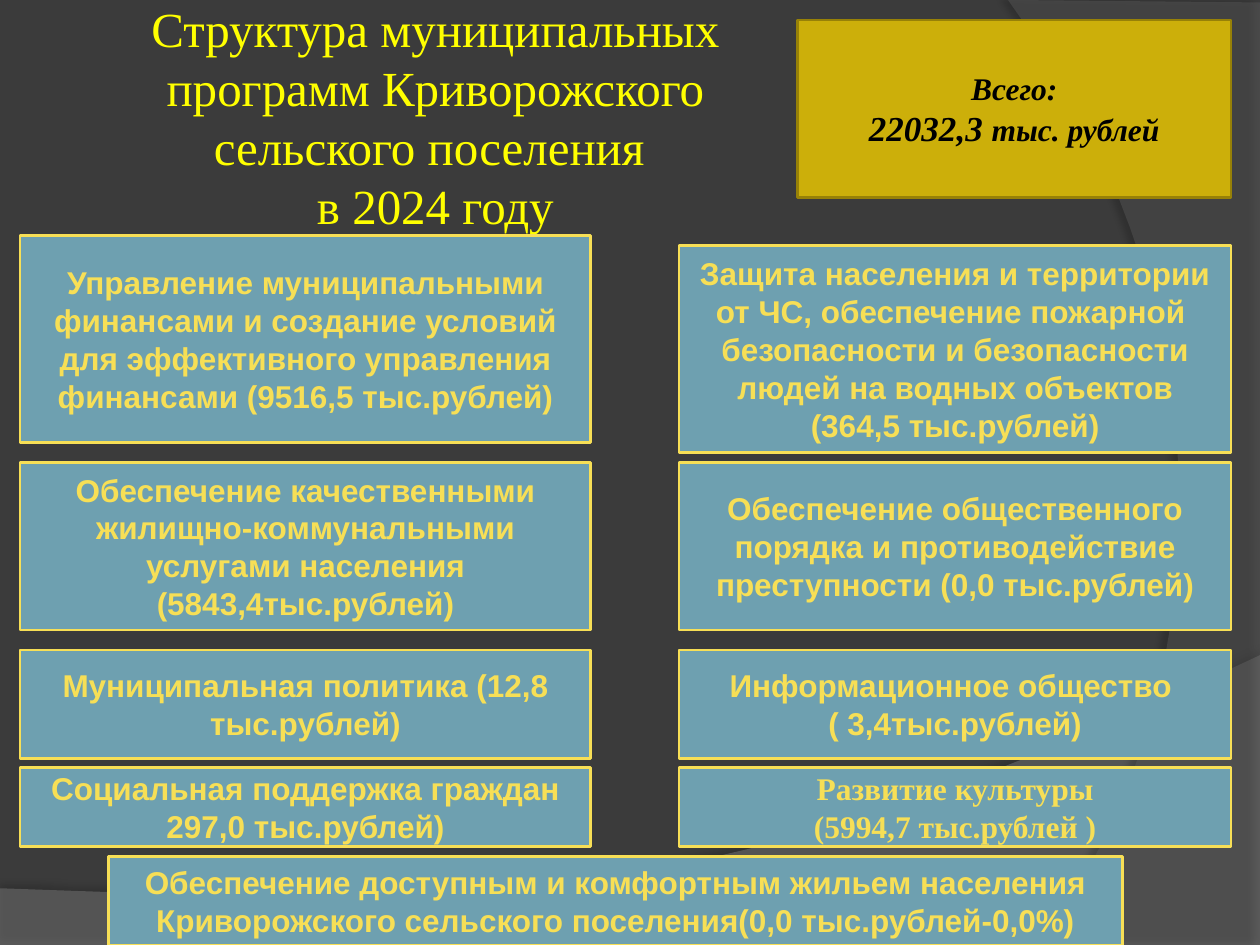
from lxml.etree import SubElement
from pptx import Presentation
from pptx.dml.color import RGBColor
from pptx.enum.shapes import MSO_SHAPE
from pptx.enum.text import MSO_ANCHOR, MSO_AUTO_SIZE, PP_ALIGN
from pptx.oxml.ns import qn
from pptx.util import Inches, Pt

BACK = RGBColor(0x3B, 0x3B, 0x3B)
WAVE = RGBColor(0x7F, 0x7F, 0x7F)
ARC = RGBColor(0x5E, 0x5E, 0x5E)
YELLOW = RGBColor(0xFF, 0xFF, 0x00)
BLACK = RGBColor(0x00, 0x00, 0x00)
GOLD = RGBColor(0xCC, 0xAF, 0x0A)
GOLD_EDGE = RGBColor(0x97, 0x81, 0x07)
TEAL = RGBColor(0x6E, 0xA0, 0xB0)
SAND = RGBColor(0xF7, 0xDF, 0x56)
SANS, SERIF = "Arial", "Times New Roman"

LEFT_X, LEFT_W = 0.16, 4.53
RIGHT_X, RIGHT_W = 5.39, 4.38
ROWS = [(1.87, 1.64), (3.67, 1.33), (5.16, 0.86), (6.09, 0.63)]
LEFT = [
    "Управление муниципальными финансами и создание условий для эффективного "
    "управления финансами (9516,5 тыс.рублей)",
    "Обеспечение качественными жилищно-коммунальными услугами населения "
    "(5843,4тыс.рублей)",
    "Муниципальная политика (12,8 тыс.рублей)",
    "Социальная поддержка граждан 297,0 тыс.рублей)",
]
RIGHT = [
    "Защита населения и территории от ЧС, обеспечение пожарной  безопасности "
    "и безопасности людей на водных объектов (364,5 тыс.рублей)",
    "Обеспечение общественного порядка и противодействие преступности "
    "(0,0 тыс.рублей)",
    "Информационное общество \n( 3,4тыс.рублей)",
    "Развитие культуры\n(5994,7 тыс.рублей )",
]
HOUSING = ("Обеспечение доступным и комфортным жильем населения Криворожского "
           "сельского поселения(0,0 тыс.рублей-0,0%)")


def curve(p0, p1, p2, p3, steps=40):
    """Return points along a cubic Bezier curve, without its start."""
    ts = [i / steps for i in range(1, steps + 1)]
    return [tuple((1 - t) ** 3 * a + 3 * (1 - t) ** 2 * t * b
                  + 3 * (1 - t) * t ** 2 * c + t ** 3 * d
                  for a, b, c, d in zip(p0, p1, p2, p3)) for t in ts]


def add_backdrop(slide, points, color, alpha, shadow):
    """Draw a translucent backdrop outline with a soft shadow."""
    start, *rest = [(Inches(x), Inches(y)) for x, y in points]
    fb = slide.shapes.build_freeform(*start)
    fb.add_line_segments(rest, close=True)
    sp = fb.convert_to_shape()
    sp.fill.solid()
    sp.fill.fore_color.rgb = color
    sp.line.fill.background()
    sp.shadow.inherit = False
    props = sp._element.spPr
    clr = props.find(qn("a:solidFill"))[0]
    SubElement(clr, qn("a:alpha"), val=str(alpha * 1000))
    opacity, dist, angle = shadow
    outer = SubElement(props.find(qn("a:effectLst")), qn("a:outerShdw"),
                       blurRad=str(Pt(4)), dist=str(Pt(dist)),
                       dir=str(angle * 60000))
    dark = SubElement(outer, qn("a:srgbClr"), val=str(BLACK))
    SubElement(dark, qn("a:alpha"), val=str(opacity * 1000))


def write(p, text, color, **formats):
    """Add a run with the given font formats to a centred paragraph."""
    p.alignment = PP_ALIGN.CENTER
    r = p.add_run()
    r.text = text
    r.font.color.rgb = color
    for name, value in formats.items():
        setattr(r.font, name, value)


def add_title(slide, box):
    """Place and fill the title placeholder."""
    sp = slide.shapes.title
    sp.left, sp.top, sp.width, sp.height = map(Inches, box)
    tf = sp.text_frame
    formats = dict(auto_size=MSO_AUTO_SIZE.NONE, word_wrap=True,
                   vertical_anchor=MSO_ANCHOR.MIDDLE)
    formats |= {f"margin_{side}": Inches(0.05)
                for side in ("left", "top", "right", "bottom")}
    for name, value in formats.items():
        setattr(tf, name, value)
    p = tf.paragraphs[0]
    style = dict(name=SERIF, size=Pt(28))
    write(p, "Структура муниципальных программ Криворожского "
          "сельского поселения ", YELLOW, **style)
    p.add_line_break()
    write(p, "в 2024 году", YELLOW, **style)


def add_panel(slide, box, fill, edge):
    """Add a bordered rectangle and return its text frame."""
    sp = slide.shapes.add_shape(MSO_SHAPE.RECTANGLE, *map(Inches, box))
    sp.shadow.inherit = False
    sp.fill.solid()
    sp.fill.fore_color.rgb = fill
    sp.line.color.rgb = edge
    sp.line.width = Pt(1.5)
    tf = sp.text_frame
    tf.word_wrap = True
    tf.vertical_anchor = MSO_ANCHOR.MIDDLE
    return tf


def add_total(slide, box):
    """Add the gold panel with the overall sum."""
    tf = add_panel(slide, box, GOLD, GOLD_EDGE)
    style = dict(name=SERIF, bold=True, italic=True)
    write(tf.paragraphs[0], "Всего:", BLACK, size=Pt(18), **style)
    p = tf.add_paragraph()
    write(p, "22032,3 ", BLACK, size=Pt(20), **style)
    write(p, "тыс. рублей", BLACK, size=Pt(18), **style)


def add_program(slide, box, text, font=SANS):
    """Add one programme panel, a paragraph per line of text."""
    tf = add_panel(slide, box, TEAL, SAND)
    for i, line in enumerate(text.split("\n")):
        p = tf.add_paragraph() if i else tf.paragraphs[0]
        write(p, line, SAND, name=font, size=Pt(18), bold=True)


def add_programs(slide):
    """Lay out the two columns of programmes and the wide one below."""
    for i, (top, height) in enumerate(ROWS):
        add_program(slide, (LEFT_X, top, LEFT_W, height), LEFT[i])
        right_top = top if i else top + 0.08
        add_program(slide, (RIGHT_X, right_top, RIGHT_W, height), RIGHT[i],
                    SERIF if i == len(ROWS) - 1 else SANS)
    add_program(slide, (0.86, 6.8, 8.05, 0.7), HOUSING)


def main():
    """Build and save the slide."""
    prs = Presentation()
    prs.slide_width, prs.slide_height = Inches(10), Inches(7.5)
    slide = prs.slides.add_slide(prs.slide_layouts[5])
    slide.background.fill.solid()
    slide.background.fill.fore_color.rgb = BACK
    wave = [(0, 7.05), (0, 7.5), (10, 7.5), (10, 5.2)]
    wave += curve((10, 5.2), (5.59, 7.29), (3.91, 7.19), (0, 7.05))
    arc = [(10, 0.02), (10, 7.5), (8.21, 7.5)]
    arc += curve((8.21, 7.5), (9.35, 6.19), (10.18, 3), (8, 0))
    add_backdrop(slide, wave, WAVE, 45, (35, 3.5, 270))
    add_backdrop(slide, arc, ARC, 40, (45, 4, 180))
    add_title(slide, (0.5, 0.3, 5.91, 1.25))
    add_total(slide, (6.33, 0.16, 3.44, 1.41))
    add_programs(slide)
    prs.save("out.pptx")


if __name__ == "__main__":
    main()
